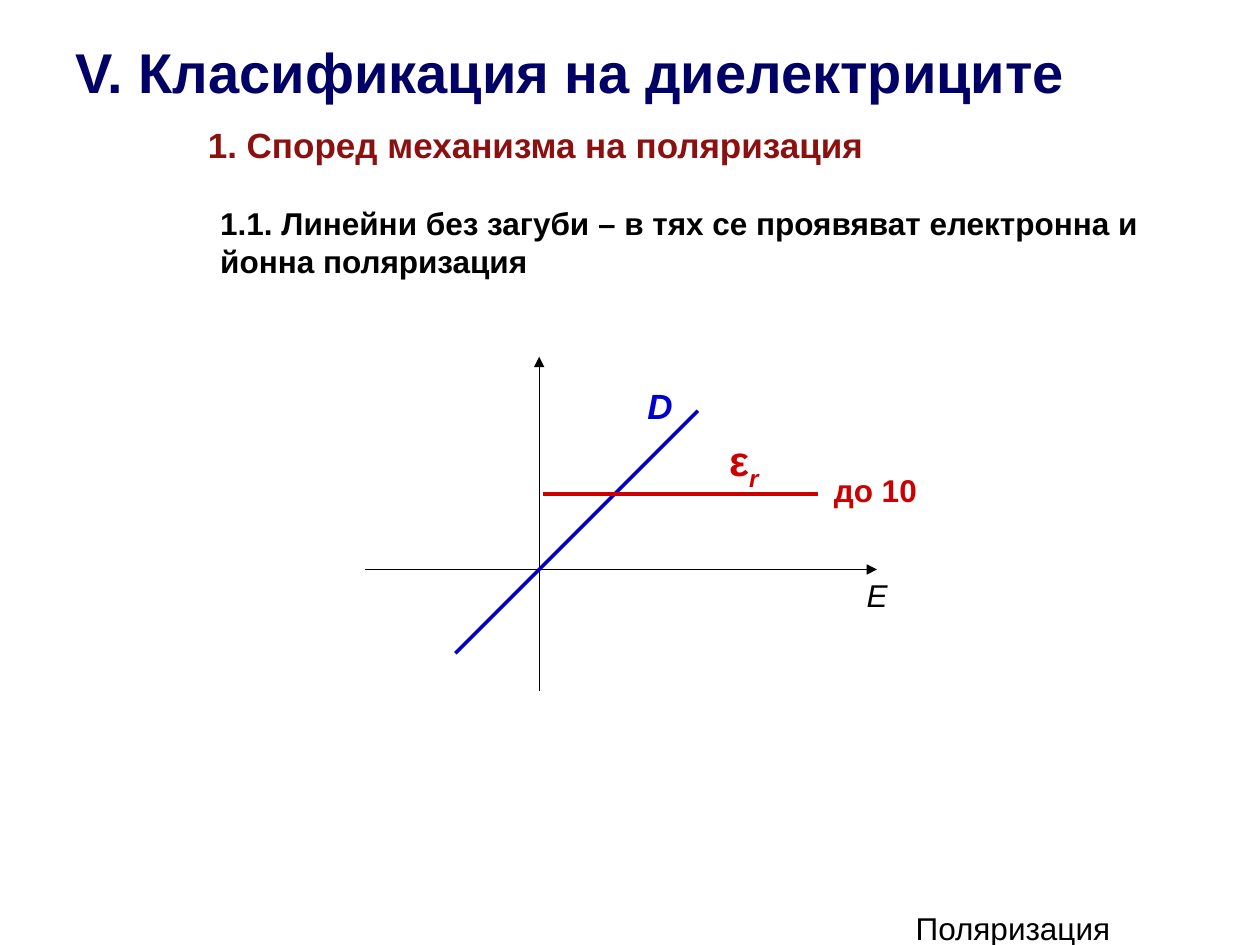
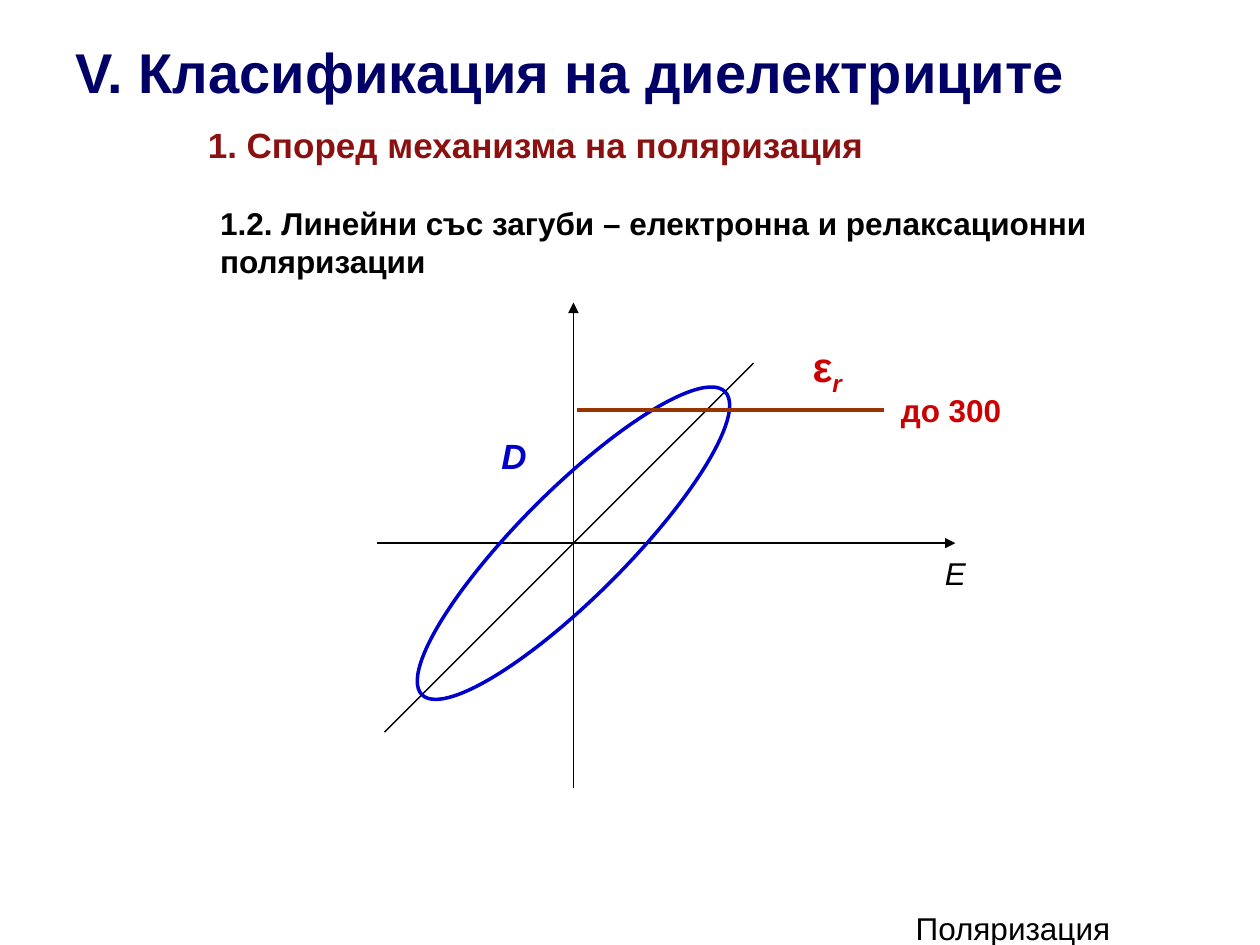
from lxml import etree
from pptx import Presentation
from pptx.dml.color import RGBColor
from pptx.enum.shapes import MSO_CONNECTOR, MSO_SHAPE
from pptx.oxml.ns import qn
from pptx.util import Cm, Pt

NAVY = RGBColor(0x00, 0x00, 0x66)
MAROON = RGBColor(0x8B, 0x11, 0x11)
BLACK = RGBColor(0x00, 0x00, 0x00)
BLUE = RGBColor(0x00, 0x00, 0xCC)
RED = RGBColor(0xCC, 0x00, 0x00)
BROWN = RGBColor(0x99, 0x33, 0x00)
FONT = "Arial"
THIN, THICK = 0.75, 2


def style_run(run, size, color, bold=False, italic=False):
    font = run.font
    font.name, font.size = FONT, Pt(size)
    font.bold, font.italic = bold, italic
    font.color.rgb = color


def add_text(shapes, box, text, size, color=BLACK, bold=False, italic=False):
    """Add a one-paragraph text box; box is left, top, width, height in cm."""
    text_box = shapes.add_textbox(*map(Cm, box))
    text_frame = text_box.text_frame
    text_frame.word_wrap = True
    text_frame.text = text
    paragraph = text_frame.paragraphs[0]
    style_run(paragraph.runs[0], size, color, bold, italic)
    return paragraph


class Plot:
    """A grouped plot whose parts are placed in cm from its origin, y down."""

    def __init__(self, slide, origin):
        self.shapes = slide.shapes.add_group_shape().shapes
        self.x, self.y = origin

    def line(self, start, end, color=BLACK, width=THIN, arrow=False):
        ends = [Cm(offset + base) for point in (start, end)
                for offset, base in zip(point, (self.x, self.y))]
        connector = self.shapes.add_connector(MSO_CONNECTOR.STRAIGHT, *ends)
        connector.line.color.rgb = color
        connector.line.width = Pt(width)
        if arrow:
            line_xml = connector.line._get_or_add_ln()
            etree.SubElement(line_xml, qn("a:tailEnd"), type="triangle")
        etree.SubElement(connector._element.spPr, qn("a:effectLst"))

    def axes(self, left, right, up, down):
        self.line((-left, 0), (right, 0), arrow=True)
        self.line((0, down), (0, -up), arrow=True)

    def diagonal(self, upper, lower, color=BLACK, width=THIN):
        self.line((upper, -upper), (-lower, lower), color, width)

    def loop(self, length, breadth):
        ellipse = self.shapes.add_shape(
            MSO_SHAPE.OVAL, Cm(self.x - length / 2), Cm(self.y - breadth / 2),
            Cm(length), Cm(breadth))
        ellipse.rotation = 135
        ellipse.shadow.inherit = False
        ellipse.fill.background()
        ellipse.line.color.rgb = BLUE
        ellipse.line.width = Pt(THICK)

    def permittivity(self, height, right, color):
        self.line((0.08, -height), (right, -height), color, THICK)

    def label(self, position, size_cm, text, size, color=BLACK, **style):
        left, top = position
        return add_text(self.shapes, (self.x + left, self.y + top, *size_cm),
                        text, size, color, **style)

    def labels(self, field, induction, epsilon, limit, limit_text):
        self.label(field, (0.94, 1.02), "E", 18, italic=True)
        self.label(induction, (1.02, 1.09), "D", 20, BLUE, bold=True, italic=True)
        paragraph = self.label(epsilon, (2.06, 1.27), "ε", 24, RED, bold=True)
        subscript = paragraph.add_run()
        subscript.text = "r"
        style_run(subscript, 24, RED, bold=True, italic=True)
        subscript.font._element.set("baseline", "-25000")
        self.label(limit, (2.54, 1.02), limit_text, 18, RED, bold=True)


def add_frame(presentation, statement):
    """Add a slide with the shared headings, its statement and the footer."""
    slide = presentation.slides.add_slide(presentation.slide_layouts[6])
    shapes = slide.shapes
    add_text(shapes, (18.21, 18.21, 5.92, 0.69), "Поляризация", 18)
    add_text(shapes, (1.27, 0.63, 20.52, 1.6),
             "V. Класификация на диелектриците", 32, NAVY, bold=True)
    add_text(shapes, (3.94, 2.36, 13.77, 1.09),
             "1. Според механизма на поляризация", 20, MAROON, bold=True)
    add_text(shapes, (4.19, 3.99, 20.17, 1.78), statement, 18, bold=True)
    return slide


def add_lossless_slide(presentation):
    slide = add_frame(presentation, "1.1. Линейни без загуби – в тях се "
                                    "проявяват електронна и йонна поляризация")
    plot = Plot(slide, (10.87, 11.48))
    plot.axes(left=3.51, right=6.81, up=4.29, down=2.44)
    plot.diagonal(3.2, 1.69, BLUE, THICK)
    plot.permittivity(1.52, 5.61, RED)
    plot.labels(field=(6.35, 0), induction=(1.93, -3.86),
                epsilon=(3.58, -2.84), limit=(5.69, -2.11), limit_text="до 10")


def add_lossy_slide(presentation):
    slide = add_frame(presentation, "1.2. Линейни със загуби – електронна и "
                                    "релаксационни поляризации")
    plot = Plot(slide, (11.56, 10.95))
    plot.axes(left=3.96, right=7.7, up=4.85, down=4.93)
    plot.diagonal(3.63, 3.81)
    plot.loop(8.64, 2.16)
    plot.permittivity(2.69, 6.27, BROWN)
    plot.labels(field=(7.24, 0.1), induction=(-1.7, -2.31),
                epsilon=(4.57, -4.22), limit=(6.35, -3.2), limit_text="до 300")


def main():
    presentation = Presentation()
    presentation.slide_width, presentation.slide_height = Cm(25.4), Cm(19.05)
    add_lossless_slide(presentation)
    add_lossy_slide(presentation)
    presentation.save("out.pptx")


if __name__ == "__main__":
    main()
